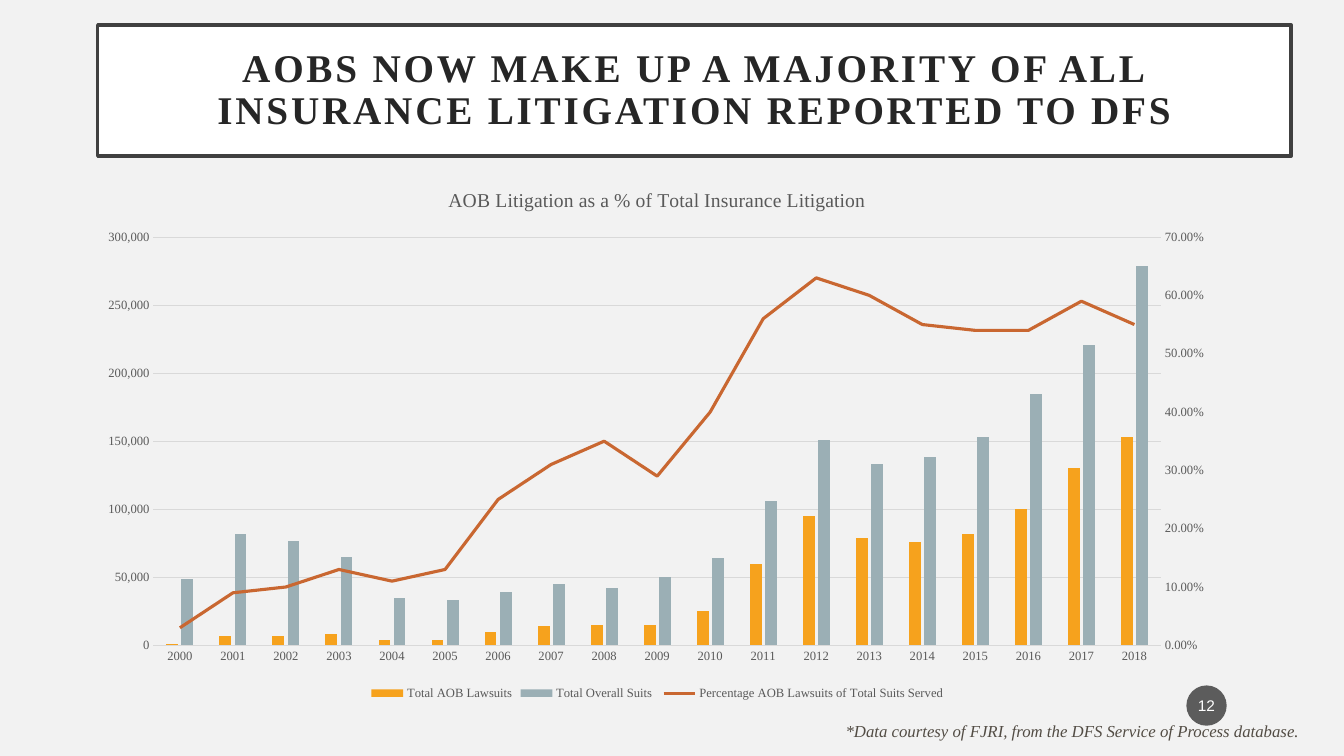
from dataclasses import dataclass

from lxml.etree import SubElement
from pptx import Presentation
from pptx.chart.data import CategoryChartData
from pptx.dml.color import RGBColor
from pptx.enum.chart import XL_CHART_TYPE as ChartType
from pptx.enum.chart import XL_LEGEND_POSITION as LegendPosition
from pptx.enum.chart import XL_MARKER_STYLE as Marker
from pptx.enum.chart import XL_TICK_MARK as TickMark
from pptx.enum.shapes import MSO_SHAPE as Preset
from pptx.enum.text import MSO_ANCHOR as Anchor
from pptx.enum.text import PP_ALIGN as Align
from pptx.oxml import parse_xml
from pptx.oxml.ns import nsdecls, qn
from pptx.util import Pt

BACKGROUND = RGBColor(0xF2, 0xF2, 0xF2)
WHITE = RGBColor(0xFF, 0xFF, 0xFF)
FRAME = RGBColor(0x40, 0x40, 0x40)
HEADING = RGBColor(0x26, 0x26, 0x26)
LABEL = RGBColor(0x59, 0x59, 0x59)
GRID = RGBColor(0xD9, 0xD9, 0xD9)
NOTE = RGBColor(0x52, 0x4C, 0x44)
BADGE = RGBColor(0x1D, 0x1D, 0x1D)
ORANGE = RGBColor(0xF6, 0xA2, 0x1D)
GREY_BLUE = RGBColor(0x9B, 0xAF, 0xB5)
RUST = RGBColor(0xC9, 0x67, 0x31)
SERIF = "Times New Roman"


@dataclass(frozen=True)
class Measure:
    name: str
    color: RGBColor
    number_format: str
    values: tuple[float, ...]


@dataclass(frozen=True)
class Label:
    text: str
    box: tuple[float, float, float, float]
    insets: tuple[float, float, float, float]
    font: dict
    anchor: Anchor = Anchor.MIDDLE
    align: Align = Align.CENTER


YEARS = [str(year) for year in range(2000, 2019)]
AOB_SUITS = Measure("Total AOB Lawsuits", ORANGE, "#,##0", tuple(
    1000 * n for n in (1, 7, 7, 8, 4, 4, 10, 14, 15, 15, 25, 60, 95, 79, 76, 82, 100, 130, 153)))
ALL_SUITS = Measure("Total Overall Suits ", GREY_BLUE, "#,##0", tuple(
    1000 * n for n in (49, 82, 77, 65, 35, 33, 39, 45, 42, 50, 64, 106, 151, 133, 138, 153,
                       185, 221, 279)))
AOB_SHARE = Measure("Percentage AOB Lawsuits of Total Suits Served", RUST, "0.00%", (
    0.03, 0.09, 0.1, 0.13, 0.11, 0.13, 0.25, 0.31, 0.35, 0.29, 0.4, 0.56, 0.63, 0.6, 0.55,
    0.54, 0.54, 0.59, 0.55))

HEADLINE = Label(
    "AOBS NOW MAKE UP A MAJORITY OF ALL INSURANCE LITIGATION REPORTED TO DFS",
    (69.84, 18, 852.48, 93.6), (14.4, 14.4, 14.4, 14.4),
    {"name": SERIF, "size": Pt(28), "bold": True, "color": HEADING})
CREDIT = Label(
    "*Data courtesy of FJRI, from the DFS Service of Process database.",
    (596.88, 511.2, 354.24, 21.6), (7.2, 3.6, 7.2, 3.6),
    {"name": SERIF, "size": Pt(12), "italic": True, "color": NOTE},
    Anchor.TOP, Align.LEFT)
PAGE_NUMBER = Label(
    "12", (847.44, 489.6, 28.8, 28.8), (1.44, 3.6, 1.44, 3.6),
    {"name": "Arial", "size": Pt(11), "color": WHITE})

CHART_BOX = (60.48, 119.52, 817.92, 383.76)
AXIS_FONT = {"name": SERIF, "size": Pt(9), "bold": False, "color": LABEL}
TITLE_FONT = AXIS_FONT | {"size": Pt(14)}

PLOT_LAYOUT = f"""<c:layout {nsdecls('c')}><c:manualLayout>
<c:layoutTarget val="inner"/><c:xMode val="edge"/><c:yMode val="edge"/>
<c:x val="0.06"/><c:y val="0.13"/><c:w val="0.88"/><c:h val="0.76"/>
</c:manualLayout></c:layout>"""
LINE_PLOT = f"""<c:lineChart {nsdecls('c')}><c:grouping val="standard"/>
<c:varyColors val="0"/><c:marker val="1"/><c:axId val="501"/><c:axId val="502"/>
</c:lineChart>"""
HIDDEN_YEARS = f"""<c:catAx {nsdecls('c')}><c:axId val="501"/>
<c:scaling><c:orientation val="minMax"/></c:scaling><c:delete val="1"/>
<c:axPos val="b"/><c:crossAx val="502"/><c:crosses val="autoZero"/></c:catAx>"""
SHARE_AXIS = f"""<c:valAx {nsdecls('c', 'a')}><c:axId val="502"/>
<c:scaling><c:orientation val="minMax"/><c:max val="0.7"/><c:min val="0"/></c:scaling>
<c:delete val="0"/><c:axPos val="r"/><c:numFmt formatCode="0.00%" sourceLinked="0"/>
<c:majorTickMark val="none"/><c:minorTickMark val="none"/><c:tickLblPos val="nextTo"/>
<c:spPr><a:ln><a:noFill/></a:ln></c:spPr>
<c:txPr><a:bodyPr/><a:p><a:pPr><a:defRPr sz="900" b="0">
<a:solidFill><a:srgbClr val="{LABEL}"/></a:solidFill><a:latin typeface="{SERIF}"/>
</a:defRPr></a:pPr><a:endParaRPr lang="en-US"/></a:p></c:txPr>
<c:crossAx val="501"/><c:crosses val="max"/><c:majorUnit val="0.1"/></c:valAx>"""


def points(box: tuple[float, ...]) -> list[Pt]:
    return [Pt(length) for length in box]


def set_font(font, values: dict) -> None:
    for key, value in values.items():
        if key == "color":
            font.color.rgb = value
        else:
            setattr(font, key, value)


def write(shape, label: Label) -> None:
    frame = shape.text_frame
    frame.word_wrap = True
    frame.vertical_anchor = label.anchor
    for side, inset in zip(("left", "top", "right", "bottom"), points(label.insets)):
        setattr(frame, f"margin_{side}", inset)
    paragraph = frame.paragraphs[0]
    paragraph.alignment = label.align
    run = paragraph.add_run()
    run.text = label.text
    set_font(run.font, label.font)


def add_panel(slide, preset: Preset, label: Label, fill: RGBColor):
    panel = slide.shapes.add_shape(preset, *points(label.box))
    panel.shadow.inherit = False
    panel.fill.solid()
    panel.fill.fore_color.rgb = fill
    write(panel, label)
    return panel


def add_headline(slide) -> None:
    panel = add_panel(slide, Preset.RECTANGLE, HEADLINE, WHITE)
    panel.line.color.rgb = FRAME
    panel.line.width = Pt(2.5)
    panel.text_frame.paragraphs[0].line_spacing = 0.9
    for properties in panel.element.iter(qn("a:rPr")):
        properties.set("spc", "200")


def add_page_number(slide) -> None:
    badge = add_panel(slide, Preset.OVAL, PAGE_NUMBER, BADGE)
    badge.line.fill.background()
    color = badge.element.spPr.find(f".//{qn('a:srgbClr')}")
    SubElement(color, qn("a:alpha")).set("val", "70000")


def move_share_to_right_axis(chart) -> None:
    """Turn the last column series into a line with its own value axis."""
    plot_area = chart.element.find(f".//{qn('c:plotArea')}")
    for layout in plot_area.findall(qn("c:layout")):
        plot_area.remove(layout)
    plot_area.insert(0, parse_xml(PLOT_LAYOUT))
    columns = plot_area.find(qn("c:barChart"))
    share = columns.findall(qn("c:ser"))[-1]
    for column_only in share.findall(qn("c:invertIfNegative")):
        share.remove(column_only)
    line_plot = parse_xml(LINE_PLOT)
    line_plot.insert(2, share)
    columns.addnext(line_plot)
    value_axis = plot_area.find(qn("c:valAx"))
    value_axis.addnext(parse_xml(HIDDEN_YEARS))
    plot_area.findall(qn("c:catAx"))[-1].addnext(parse_xml(SHARE_AXIS))


def add_litigation_chart(slide) -> None:
    data = CategoryChartData()
    data.categories = YEARS
    for measure in (AOB_SUITS, ALL_SUITS, AOB_SHARE):
        data.add_series(measure.name, measure.values, measure.number_format)
    chart = slide.shapes.add_chart(ChartType.COLUMN_CLUSTERED, *points(CHART_BOX), data).chart
    set_font(chart.font, AXIS_FONT | {"size": Pt(10)})
    title = chart.chart_title.text_frame.paragraphs[0].add_run()
    title.text = "AOB Litigation as a % of Total Insurance Litigation"
    set_font(title.font, TITLE_FONT)
    chart.has_legend = True
    chart.legend.position = LegendPosition.BOTTOM
    chart.legend.include_in_layout = False
    set_font(chart.legend.font, AXIS_FONT)

    years, suits = chart.category_axis, chart.value_axis
    for axis in (years, suits):
        axis.major_tick_mark = axis.minor_tick_mark = TickMark.NONE
        set_font(axis.tick_labels.font, AXIS_FONT)
    for line in (years.format.line, suits.major_gridlines.format.line):
        line.color.rgb = GRID
        line.width = Pt(0.75)
    suits.format.line.fill.background()
    suits.minimum_scale, suits.maximum_scale, suits.major_unit = 0, 300000, 50000
    suits.tick_labels.number_format = "#,##0"
    suits.tick_labels.number_format_is_linked = False

    move_share_to_right_axis(chart)
    columns, lines = chart.plots
    columns.gap_width, columns.overlap = 219, -27
    columns.vary_by_categories = False
    for series, measure in zip(columns.series, (AOB_SUITS, ALL_SUITS)):
        series.format.fill.solid()
        series.format.fill.fore_color.rgb = measure.color
    share = lines.series[0]
    share.smooth = False
    share.marker.style = Marker.NONE
    share.format.line.color.rgb = AOB_SHARE.color
    share.format.line.width = Pt(2.25)


def main() -> None:
    deck = Presentation()
    deck.slide_width, deck.slide_height = Pt(960), Pt(540)
    slide = deck.slides.add_slide(deck.slide_layouts[6])
    slide.background.fill.solid()
    slide.background.fill.fore_color.rgb = BACKGROUND
    add_headline(slide)
    add_litigation_chart(slide)
    write(slide.shapes.add_textbox(*points(CREDIT.box)), CREDIT)
    add_page_number(slide)
    deck.save("out.pptx")


if __name__ == "__main__":
    main()
